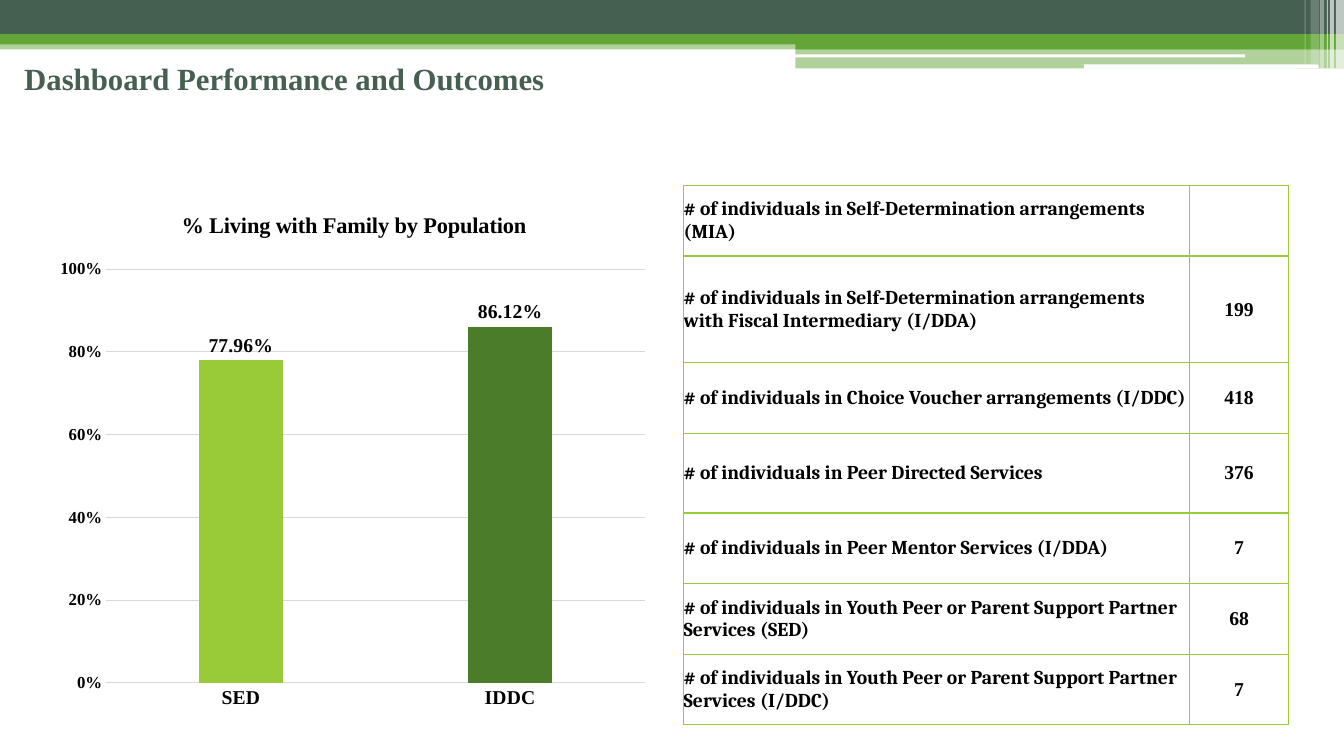
from lxml import etree
from pptx import Presentation
from pptx.chart.data import CategoryChartData
from pptx.dml.color import RGBColor
from pptx.enum.chart import XL_CHART_TYPE as ChartType, XL_LABEL_POSITION as LabelPosition
from pptx.enum.chart import XL_TICK_MARK as TickMark
from pptx.enum.shapes import MSO_SHAPE as Shape
from pptx.enum.text import MSO_ANCHOR as Anchor, PP_ALIGN as Align
from pptx.oxml import parse_xml
from pptx.oxml.ns import nsdecls, qn
from pptx.util import Inches, Pt

DARK, GREEN, LIME, FOREST = "455F51", "63A537", "99CB38", "4A7C29"
WHITE, BLACK, GRAY = "FFFFFF", "000000", "D9D9D9"
SERIF, BODY = "Times New Roman", "Cambria"

TITLE = "Dashboard Performance and Outcomes"
CHART_TITLE = "% Living with Family by Population"
FAMILY_SHARE = {"SED": (0.7796, LIME), "IDDC": (0.8612, FOREST)}
# label, count, row height
MEASURES = [
    ("# of individuals in Self-Determination arrangements (MIA)", "", 0.7),
    ("# of individuals in Self-Determination arrangements with Fiscal Intermediary (I/DDA)", "199", 1.06),
    ("# of individuals in Choice Voucher arrangements (I/DDC)", "418", 0.7),
    ("# of individuals in Peer Directed Services", "376", 0.79),
    ("# of individuals in Peer Mentor Services (I/DDA)", "7", 0.7),
    ("# of individuals in Youth Peer or Parent Support Partner Services (SED)", "68", 0.7),
    ("# of individuals in Youth Peer or Parent Support Partner Services (I/DDC)", "7", 0.7),
]
COLUMN_WIDTHS = (5.02, 0.98)
# left, top, width, height, colour, opacity in percent
BANDS = [
    (0, 0.4, 13.33, 0.09, GREEN, 50),
    (0, 0, 13.33, 0.34, DARK, 100),
    (0, 0.34, 13.33, 0.1, GREEN, 100),
    (7.89, 0.39, 5.44, 0.1, GREEN, 100),
    (7.89, 0.48, 5.44, 0.2, GREEN, 50),
]
WHITE_BARS = [(7.88, 0.54, 4.47, 0.03, WHITE, 100), (10.75, 0.64, 2.33, 0.04, WHITE, 100)]
STRIPES = [
    (13.25, 0, 0.08, 0.68, WHITE, 65),
    (13.19, 0, 0.04, 0.68, WHITE, 65),
    (13.16, 0, 0.01, 0.68, WHITE, 60),
    (13.09, 0, 0.04, 0.68, WHITE, 40),
    (13, 0, 0.08, 0.64, WHITE, 20),
    (12.94, 0, 0.01, 0.64, WHITE, 30),
]


def rgb(color):
    return RGBColor.from_string(color)


def style_font(font, size, color=BLACK, name=SERIF):
    font.size, font.bold, font.name = Pt(size), True, name
    font.color.rgb = rgb(color)


def write(frame, text, size, color=BLACK, name=SERIF, align=Align.LEFT):
    para = frame.paragraphs[0]
    para.alignment = align
    span = para.add_run()
    span.text = text
    style_font(span.font, size, color, name)


def add_band(page, band, kind):
    left, top, width, height, color, opacity = band
    box = page.shapes.add_shape(kind, *map(Inches, (left, top, width, height)))
    box.shadow.inherit = False
    box.fill.solid()
    box.fill.fore_color.rgb = rgb(color)
    box.line.fill.background()
    if opacity < 100:
        fill_color = box.fill._xPr.find(qn("a:solidFill"))[0]
        etree.SubElement(fill_color, qn("a:alpha")).set("val", str(opacity * 1000))


def add_title(page):
    title = page.shapes.title
    title.left, title.top, title.width, title.height = map(Inches, (0.14, 0.19, 12, 1.17))
    title.text_frame.vertical_anchor = Anchor.MIDDLE
    write(title.text_frame, TITLE, 22, color=DARK)


def set_borders(cell, color):
    properties = cell._tc.get_or_add_tcPr()
    for position, side in enumerate(("lnL", "lnR", "lnT", "lnB")):
        properties.insert(position, parse_xml(
            f'<a:{side} {nsdecls("a")} w="12700"><a:solidFill>'
            f'<a:srgbClr val="{color}"/></a:solidFill></a:{side}>'))


def add_measures(page):
    heights = [height for _, _, height in MEASURES]
    frame = page.shapes.add_table(
        len(MEASURES), 2, Inches(6.78), Inches(1.84),
        Inches(sum(COLUMN_WIDTHS)), Inches(sum(heights)))
    table = frame.table
    table.first_row = table.horz_banding = False
    for column, width in zip(table.columns, COLUMN_WIDTHS):
        column.width = Inches(width)
    formats = ({"name": BODY}, {"align": Align.CENTER})
    for row, (label, count, height) in zip(table.rows, MEASURES):
        row.height = Inches(height)
        for cell, text, text_format in zip(row.cells, (label, count), formats):
            cell.fill.background()
            cell.vertical_anchor = Anchor.MIDDLE
            cell.margin_left = cell.margin_right = cell.margin_top = cell.margin_bottom = 0
            set_borders(cell, LIME)
            if text:
                write(cell.text_frame, text, 14, **text_format)


def place(element, successors, **fractions):
    """Fix the position of a chart part as fractions of the chart."""
    layout = element.find(qn("c:layout"))
    if layout is not None:
        element.remove(layout)
    target = '<c:layoutTarget val="inner"/>' if "w" in fractions else ""
    modes = "".join(f'<c:{key}Mode val="edge"/>' for key in ("x", "y"))
    values = "".join(f'<c:{key} val="{value}"/>' for key, value in fractions.items())
    element.insert_element_before(parse_xml(
        f'<c:layout {nsdecls("c")}><c:manualLayout>{target}{modes}{values}'
        f'</c:manualLayout></c:layout>'), *successors)


def style_line(line, color):
    line.color.rgb = rgb(color)
    line.width = Pt(0.75)


def add_family_chart(page):
    data = CategoryChartData(number_format="0.00%")
    data.categories = list(FAMILY_SHARE)
    data.add_series("Series 1", [value for value, _ in FAMILY_SHARE.values()])
    chart = page.shapes.add_chart(
        ChartType.COLUMN_CLUSTERED, *map(Inches, (0.41, 1.84, 6.14, 5.36)), data).chart
    chart.has_legend = False
    chart.font.size, chart.font.name = Pt(10), "Calibri"
    write(chart.chart_title.text_frame, CHART_TITLE, 16, align=Align.CENTER)
    chart.chart_title.include_in_layout = False
    place(chart.chart_title._element, ("c:overlay",), x=0.22, y=0.04)
    place(chart._chartSpace.chart.plotArea, ("c:barChart",), x=0.105, y=0.155, w=0.87, h=0.766)

    category_axis, value_axis = chart.category_axis, chart.value_axis
    for axis, size in ((category_axis, 14), (value_axis, 12)):
        axis.major_tick_mark = axis.minor_tick_mark = TickMark.NONE
        style_font(axis.tick_labels.font, size)
    style_line(category_axis.format.line, GRAY)
    value_axis.format.line.fill.background()
    value_axis.minimum_scale, value_axis.maximum_scale, value_axis.major_unit = 0, 1, 0.2
    value_axis.tick_labels.number_format = "0%"
    value_axis.tick_labels.number_format_is_linked = False
    style_line(value_axis.major_gridlines.format.line, GRAY)

    plot = chart.plots[0]
    plot.gap_width, plot.overlap, plot.vary_by_categories = 219, -27, False
    series = plot.series[0]
    series.format.fill.solid()
    series.format.fill.fore_color.rgb = rgb(LIME)
    for index, (_, color) in enumerate(FAMILY_SHARE.values()):
        fill = series.points[index].format.fill
        fill.solid()
        fill.fore_color.rgb = rgb(color)
    labels = series.data_labels
    labels.show_value = True
    labels.position = LabelPosition.OUTSIDE_END
    labels.number_format, labels.number_format_is_linked = "0.00%", False
    style_font(labels.font, 14)


def main():
    deck = Presentation()
    deck.slide_width, deck.slide_height = Inches(13.33), Inches(7.5)
    page = deck.slides.add_slide(deck.slide_layouts[5])
    groups = ((BANDS, Shape.RECTANGLE), (WHITE_BARS, Shape.ROUNDED_RECTANGLE), (STRIPES, Shape.RECTANGLE))
    for bands, kind in groups:
        for band in bands:
            add_band(page, band, kind)
    add_title(page)
    add_measures(page)
    add_family_chart(page)
    deck.save("out.pptx")


if __name__ == "__main__":
    main()
